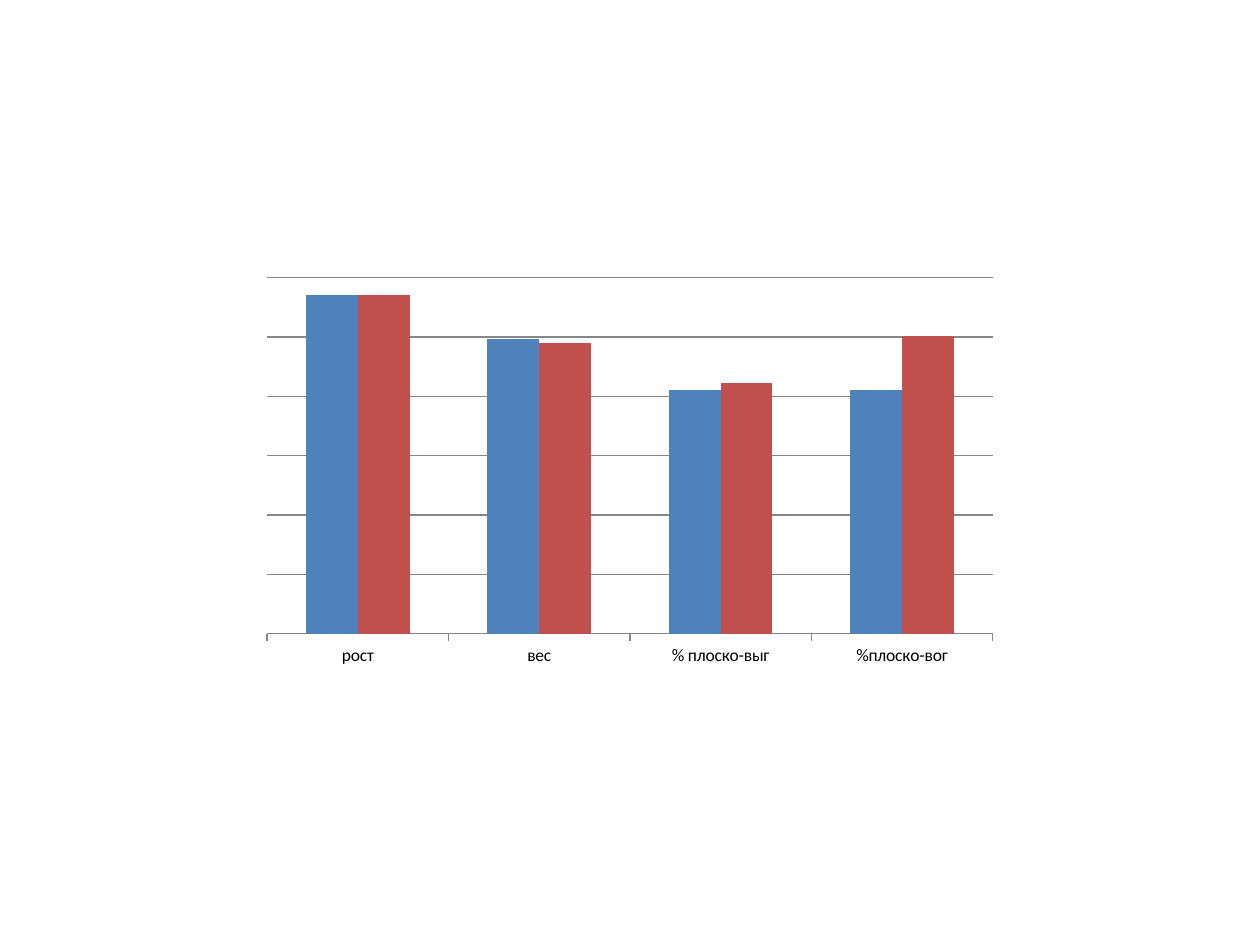
from pptx import Presentation
from pptx.chart.data import CategoryChartData
from pptx.dml.color import RGBColor
from pptx.enum.chart import XL_CHART_TYPE as ChartType, XL_TICK_MARK as TickMark
from pptx.oxml import parse_xml
from pptx.oxml.ns import nsdecls
from pptx.util import Inches, Pt

BLACK = RGBColor(0x00, 0x00, 0x00)
GRAY = RGBColor(0x87, 0x87, 0x87)
BLUE = RGBColor(0x4F, 0x81, 0xBD)
RED = RGBColor(0xC0, 0x50, 0x4D)
GRID_STEP = 17.54
GRID_COUNT = 6

presentation = Presentation()
presentation.slide_width = Inches(10)
presentation.slide_height = Inches(7.5)
slide = presentation.slides.add_slide(presentation.slide_layouts[6])

chart_data = CategoryChartData()
chart_data.categories = ["рост", "вес", "% плоско-выг", "%плоско-вог"]
chart_data.add_series("Series 1", [100, 87, 72, 72])
chart_data.add_series("Series 2", [100, 86, 74, 88])

chart = slide.shapes.add_chart(
    ChartType.COLUMN_CLUSTERED, Inches(2), Inches(2.14), Inches(6), Inches(3.21), chart_data
).chart
chart.has_title = False
chart.has_legend = False
chart.font.name = "Calibri"
chart.font.size = Pt(10)
chart.font.color.rgb = BLACK

plot = chart.plots[0]
plot.vary_by_categories = False
plot.gap_width = 150
plot.overlap = 0
for series, color in zip(plot.series, [BLUE, RED]):
    series.format.fill.solid()
    series.format.fill.fore_color.rgb = color

category_axis = chart.category_axis
category_axis.major_tick_mark = TickMark.OUTSIDE
category_axis.has_major_gridlines = False

value_axis = chart.value_axis
value_axis.visible = False
value_axis.minimum_scale = 0
value_axis.maximum_scale = GRID_STEP * GRID_COUNT
value_axis.major_unit = GRID_STEP
value_axis.has_major_gridlines = True

for line in (category_axis.format.line, value_axis.major_gridlines.format.line):
    line.color.rgb = GRAY
    line.width = Pt(0.75)

plot_area = chart.element.chart.plotArea
for layout in plot_area.findall("{*}layout"):
    plot_area.remove(layout)
plot_area.insert(0, parse_xml(
    f'<c:layout {nsdecls("c")}><c:manualLayout><c:layoutTarget val="inner"/>'
    '<c:xMode val="edge"/><c:yMode val="edge"/>'
    '<c:x val="0.02"/><c:y val="0.02"/><c:w val="0.96"/><c:h val="0.88"/>'
    '</c:manualLayout></c:layout>'
))

presentation.save("out.pptx")
